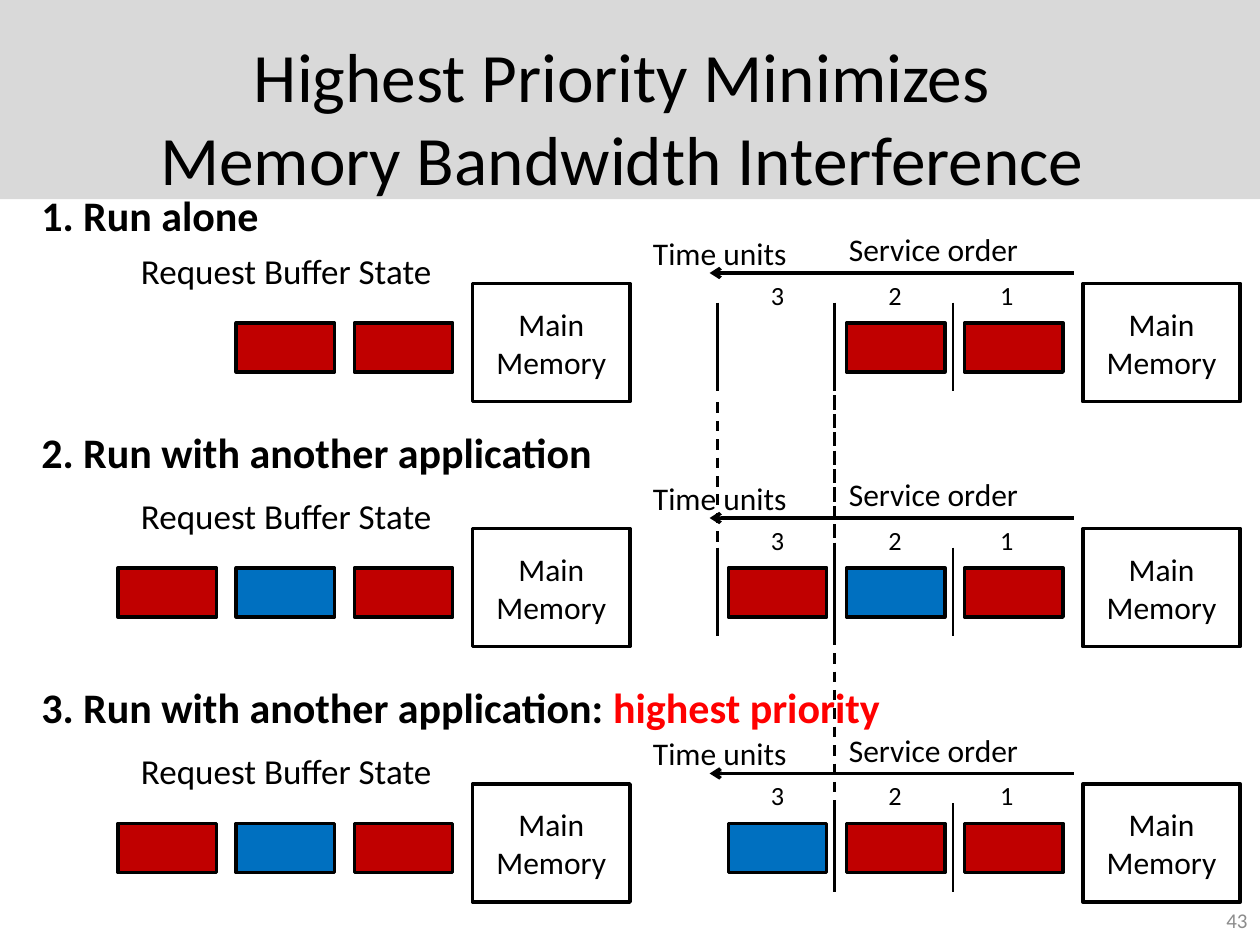
"""Build the slide on highest priority and memory bandwidth interference."""
from lxml import etree
from pptx import Presentation
from pptx import util as u
from pptx.dml.color import RGBColor
from pptx.enum import dml, shapes, text
from pptx.oxml import ns

BLACK = RGBColor(0x00, 0x00, 0x00)
BAND_GRAY = RGBColor(0xD9, 0xD9, 0xD9)
NUMBER_GRAY = RGBColor(0x8C, 0x8C, 0x8C)
RED = RGBColor(0xC0, 0x00, 0x00)
BLUE = RGBColor(0x00, 0x70, 0xC0)
BRIGHT_RED = RGBColor(0xFF, 0x00, 0x00)

FONT = "Calibri"
SLOT_STEP = 67.5
REQUEST_LEFT, SERVICE_LEFT = 67.5, 416.25
TICKS = (410, 477, 544.5)
NUMBER_LEFTS = {"3": 433.5, "2": 500.5, "1": 564.5}

SCENARIOS = [
    {
        "top": 162, "heading_top": 105, "ticks": TICKS,
        "heading": [("1. Run alone", BLACK)],
        "requests": (None, RED, RED), "services": (None, RED, RED),
    },
    {
        "top": 302, "heading_top": 240, "ticks": TICKS,
        "heading": [("2. Run with another application", BLACK)],
        "requests": (RED, BLUE, RED), "services": (RED, BLUE, RED),
    },
    {
        "top": 448, "heading_top": 386, "ticks": TICKS[1:],
        "heading": [("3. Run with another application: ", BLACK),
                    ("highest priority", BRIGHT_RED)],
        "requests": (RED, BLUE, RED), "services": (BLUE, RED, RED),
    },
]
DASHED_GUIDES = [(477, 228, 330), (410, 230, 330), (477, 226, 484.5)]


def apply_format(target, values):
    """Set each named attribute of the target."""
    for name, value in values.items():
        setattr(target, name, value)


def write(shape, runs, size, bold=False, align=text.PP_ALIGN.LEFT,
          anchor=text.MSO_ANCHOR.TOP):
    """Fill a shape with one paragraph of coloured runs."""
    apply_format(shape.text_frame, {"word_wrap": True, "vertical_anchor": anchor})
    paragraph = shape.text_frame.paragraphs[0]
    paragraph.alignment = align
    for wording, color in runs:
        run = paragraph.add_run()
        run.text = wording
        apply_format(run.font, {"name": FONT, "size": u.Pt(size), "bold": bold})
        run.font.color.rgb = color


def add_label(slide, box, runs, size, **options):
    """Add a text box."""
    shape = slide.shapes.add_textbox(*map(u.Pt, box))
    write(shape, runs, size, **options)
    return shape


def add_box(slide, box, fill=None, outlined=True):
    """Add a rectangle, hollow when no fill is given."""
    shape = slide.shapes.add_shape(shapes.MSO_SHAPE.RECTANGLE, *map(u.Pt, box))
    shape.shadow.inherit = False
    if fill is None:
        shape.fill.background()
    else:
        shape.fill.solid()
        shape.fill.fore_color.rgb = fill
    if outlined:
        shape.line.color.rgb = BLACK
        shape.line.width = u.Pt(2)
    else:
        shape.line.fill.background()
    return shape


def add_line(slide, start, end, width=1.5, dash=None, arrow=False):
    """Add a straight black line, optionally dashed or with an arrowhead."""
    line = slide.shapes.add_connector(
        shapes.MSO_CONNECTOR.STRAIGHT, *map(u.Pt, start + end))
    line.line.color.rgb = BLACK
    apply_format(line.line, {"width": u.Pt(width), "dash_style": dash})
    properties = line.element.spPr
    if arrow:
        outline = properties.find(ns.qn("a:ln"))
        etree.SubElement(outline, ns.qn("a:tailEnd"), type="arrow")
    etree.SubElement(properties, ns.qn("a:effectLst"))


def add_title(slide):
    """Place the title over its gray band."""
    title = slide.shapes.title
    apply_format(title, {"left": u.Pt(36), "top": u.Pt(21.6),
                         "width": u.Pt(648), "height": u.Pt(90)})
    wording = "Highest Priority Minimizes \vMemory Bandwidth Interference "
    title.text_frame.text = wording
    apply_format(title.text_frame, {"vertical_anchor": text.MSO_ANCHOR.MIDDLE,
                                    "word_wrap": True})
    paragraph = title.text_frame.paragraphs[0]
    paragraph.alignment = text.PP_ALIGN.CENTER
    for run in paragraph.runs:
        apply_format(run.font, {"name": FONT, "size": u.Pt(39.6)})
        run.font.color.rgb = BLACK
    band = add_box(slide, (0, 0, 720, 113.75), BAND_GRAY, outlined=False)
    title.element.addprevious(band.element)


def add_memory(slide, left, top):
    """Add a main memory box."""
    memory = add_box(slide, (left, top, 90, 67.5))
    write(memory, [("Main Memory", BLACK)], 18,
          align=text.PP_ALIGN.CENTER, anchor=text.MSO_ANCHOR.MIDDLE)


def add_queue(slide, left, top, colors):
    """Add the requests of one queue, leaving empty slots open."""
    for slot, color in enumerate(colors):
        if color is not None:
            add_box(slide, (left + slot * SLOT_STEP, top, 56.25, 28.1), color)


def add_scenario(slide, scenario):
    """Add one row: heading, request buffer and service timeline."""
    top = scenario["top"]
    add_label(slide, (16.5, scenario["heading_top"], 624, 36),
              scenario["heading"], 24, bold=True)
    add_label(slide, (73.5, top - 23, 196.5, 31.5),
              [("Request Buffer State", BLACK)], 20)
    add_label(slide, (366, top - 32, 140, 29), [("Time units", BLACK)], 18)
    add_label(slide, (478, top - 34, 124, 29), [("Service order", BLACK)], 18)
    for left in (270, 618.75):
        add_memory(slide, left, top)
    add_queue(slide, REQUEST_LEFT, top + 22.5, scenario["requests"])
    add_queue(slide, SERVICE_LEFT, top + 22.5, scenario["services"])
    add_line(slide, (613.5, top - 6), (405.5, top - 6), width=2, arrow=True)
    for x in scenario["ticks"]:
        add_line(slide, (x, top + 11), (x, top + 61.5))
    for number, left in NUMBER_LEFTS.items():
        add_label(slide, (left, top - 6, 16.5, 25.5), [(number, BLACK)], 15)


def main():
    """Build and save the slide."""
    presentation = Presentation()
    presentation.slide_width, presentation.slide_height = u.Pt(720), u.Pt(540)
    slide = presentation.slides.add_slide(presentation.slide_layouts[5])
    add_title(slide)
    for scenario in SCENARIOS:
        add_scenario(slide, scenario)
    for x, top, bottom in DASHED_GUIDES:
        add_line(slide, (x, top), (x, bottom), dash=dml.MSO_LINE.DASH)
    add_label(slide, (552, 511.25, 168, 28.75), [("43", NUMBER_GRAY)], 12,
              align=text.PP_ALIGN.RIGHT, anchor=text.MSO_ANCHOR.MIDDLE)
    presentation.save("out.pptx")


if __name__ == "__main__":
    main()
